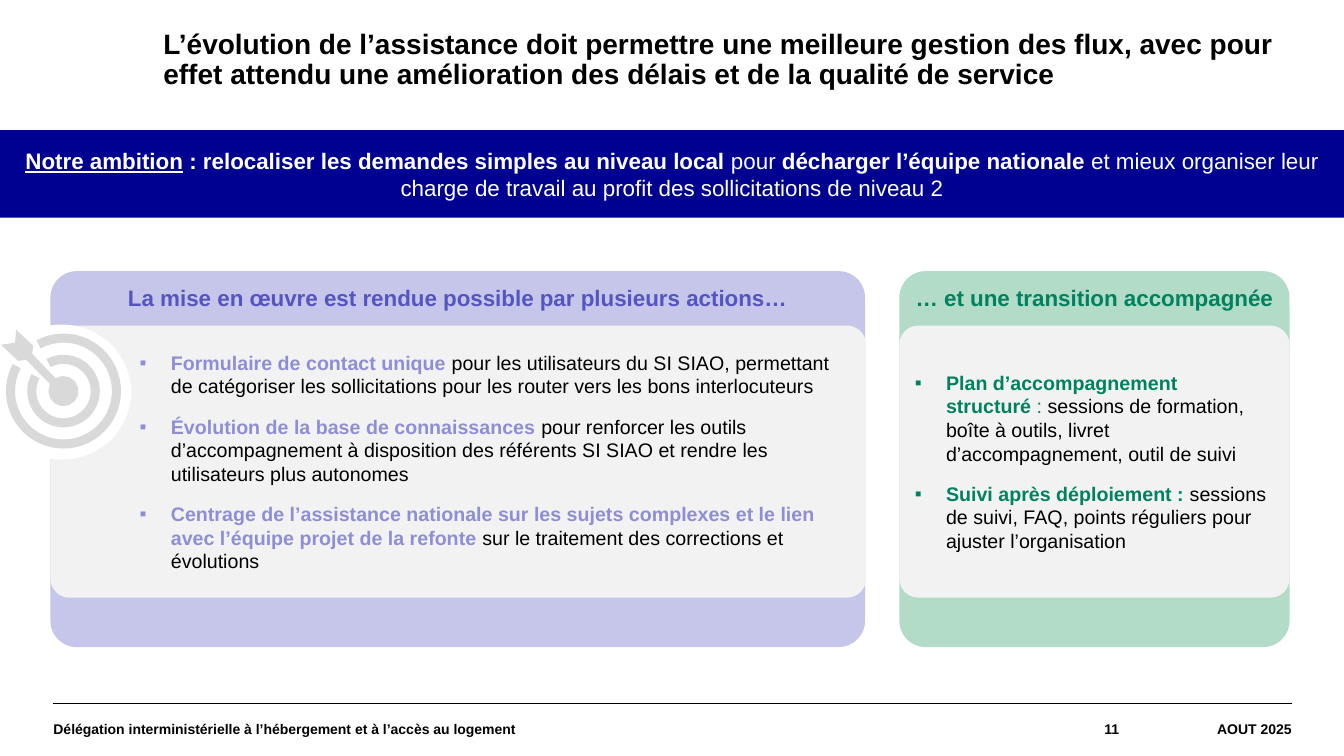
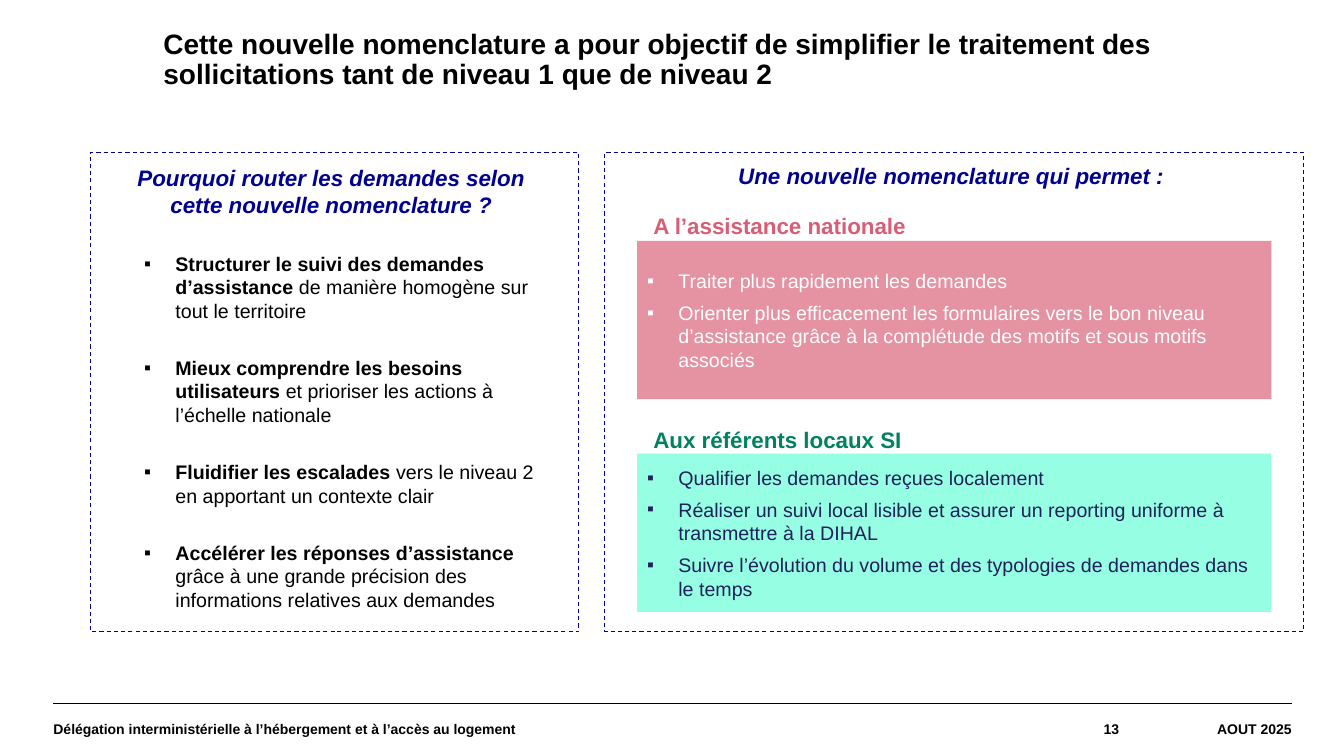
from math import cos, radians, sin
from typing import Any, NamedTuple

import pptx
from lxml import etree
from pptx import slide as sl
from pptx import util as u
from pptx.dml import color as col
from pptx.enum import dml, shapes, text
from pptx.oxml import ns

HUES = {
    "black": "000000", "white": "FFFFFF", "navy": "000091", "ink": "21215A",
    "violet": "5555C1", "lilac": "8E8ED5", "haze": "C6C6EA", "light": "F2F2F2",
    "green": "008260", "sage": "B3DCC8", "mint": "96FFE3",
    "rose": "D85D75", "pink": "E593A3", "grey": "D9D9D9",
}
FONT = "Arial"
CENTER, RIGHT = text.PP_ALIGN.CENTER, text.PP_ALIGN.RIGHT
TOP, MIDDLE = text.MSO_ANCHOR.TOP, text.MSO_ANCHOR.MIDDLE
RECT, ROUND = shapes.MSO_SHAPE.RECTANGLE, shapes.MSO_SHAPE.ROUNDED_RECTANGLE
OVAL, ARC = shapes.MSO_SHAPE.OVAL, shapes.MSO_SHAPE.BLOCK_ARC
FLUSH = (0, 0, 0, 0)
ORG = "Délégation interministérielle à l’hébergement et à l’accès au logement"


class Box(NamedTuple):
    left: float
    top: float
    width: float
    height: float


class Run(NamedTuple):
    words: str
    hue: str = "black"
    size: int = 14
    bold: bool = False
    italic: bool = False
    underline: bool = False


class Para(NamedTuple):
    runs: list[Run]
    form: dict[str, Any] = {}
    indent: float = 0


class Body(NamedTuple):
    paras: list[Para]
    anchor: Any = TOP
    inset: tuple[float, float, float, float] = (0.1, 0.05, 0.1, 0.05)


class Panel(NamedTuple):
    box: Box
    fill: str
    head: Para
    body: Body
    wide: float


class Card(NamedTuple):
    top: float
    label: Box
    title: str
    hue: str
    fill: str
    ink: str
    items: list[str]


def rgb(hue: str) -> col.RGBColor:
    return col.RGBColor.from_string(HUES[hue])


def apply(item: Any, form: dict[str, Any]) -> None:
    for name, value in form.items():
        setattr(item, name, value)


def strong(words: str, hue: str = "black", size: int = 14) -> Run:
    return Run(words, hue, size, bold=True)


def bullets(rows: list[list[Run]], gap: int) -> list[Para]:
    return [Para(row, {"space_before": u.Pt(gap if i else 0)}, 0.31)
            for i, row in enumerate(rows)]


def write(shape: Any, body: Body) -> None:
    frame = shape.text_frame
    sides = ("margin_left", "margin_top", "margin_right", "margin_bottom")
    apply(frame, {"word_wrap": True, "vertical_anchor": body.anchor,
                  **dict(zip(sides, map(u.Inches, body.inset)))})
    for i, para in enumerate(body.paras):
        line = frame.add_paragraph() if i else frame.paragraphs[0]
        if para.indent:
            props = line._p.get_or_add_pPr()
            props.set("marL", str(u.Inches(para.indent)))
            props.set("indent", str(-u.Inches(0.31)))
            etree.SubElement(props, ns.qn("a:buFont")).set("typeface", FONT)
            etree.SubElement(props, ns.qn("a:buChar")).set("char", "▪")
        apply(line, {"alignment": text.PP_ALIGN.LEFT, **para.form})
        for run in para.runs:
            part = line.add_run()
            part.text = run.words
            apply(part.font, {
                "name": FONT, "size": u.Pt(run.size), "bold": run.bold,
                "italic": run.italic, "underline": run.underline})
            part.font.color.rgb = rgb(run.hue)


def label(page: sl.Slide, box: Box, body: Body) -> None:
    write(page.shapes.add_textbox(*map(u.Inches, box)), body)


def paint(shape: Any, fill: str, edge: str = "") -> None:
    shape.shadow.inherit = False
    shape.fill.solid()
    shape.fill.fore_color.rgb = rgb(fill)
    if edge:
        shape.line.color.rgb = rgb(edge)
        apply(shape.line, {"width": u.Pt(0.75), "dash_style": dml.MSO_LINE.DASH})
    else:
        shape.line.fill.background()


def block(page: sl.Slide, box: Box, fill: str, body: Body | None = None,
          kind: Any = RECT, edge: str = "") -> Any:
    shape = page.shapes.add_shape(kind, *map(u.Inches, box))
    if kind == ROUND:
        shape.adjustments[0] = 0.07
    paint(shape, fill, edge)
    if body:
        write(shape, body)
    return shape


def frame(deck: Any, title: str, number: int) -> sl.Slide:
    page = deck.slides.add_slide(deck.slide_layouts[6])
    rule = page.shapes.add_connector(
        shapes.MSO_CONNECTOR.STRAIGHT,
        *map(u.Inches, (0.53, 6.98, 12.81, 6.98)))
    rule.line.color.rgb = rgb("black")
    rule.line.width = u.Pt(0.8)
    etree.SubElement(rule._element.spPr, ns.qn("a:effectLst"))
    foot = [(0.53, 8.61, ORG, None), (11.1, 1.71, "AOUT 2025", RIGHT),
            (9.13, 1.97, str(number), RIGHT)]
    for left, width, words, align in foot:
        para = Para([strong(words, size=10)], {"alignment": align})
        label(page, Box(left, 6.97, width, 0.53), Body([para], MIDDLE, FLUSH))
    head = Para([strong(title, size=20)], {"line_spacing": 0.9})
    label(page, Box(1.62, 0.3, 11.23, 1.05), Body([head], TOP, FLUSH))
    return page


def target(page: sl.Slide) -> None:
    block(page, Box(-0.08, 3.22, 1.38, 1.34), "white", kind=OVAL)
    mid_x, mid_y = 0.63, 3.88
    turns = [radians(208 - 27.5 * i) for i in range(13)]
    bull = [(mid_x + 0.15 * cos(t), mid_y + 0.15 * sin(t)) for t in turns]
    dart = [(0.32, 3.51), (0.33, 3.43), (0.16, 3.27), (0.15, 3.4),
            (0.01, 3.42), (0.18, 3.58), (0.26, 3.57), *bull]
    spots = [(u.Inches(x), u.Inches(y)) for x, y in dart]
    pen = page.shapes.build_freeform(*spots[0])
    pen.add_line_segments(spots[1:], close=True)
    paint(pen.convert_to_shape(), "grey")
    for radius in (0.57, 0.36):
        size = 2 * radius
        ring = block(page, Box(mid_x - radius, mid_y - radius, size, size),
                     "grey", kind=ARC)
        for i, value in enumerate((242 * 0.6, 208 * 0.6, 0.09 / size)):
            ring.adjustments[i] = value


def support(deck: Any) -> None:
    page = frame(
        deck, "L’évolution de l’assistance doit permettre une meilleure gestion "
        "des flux, avec pour effet attendu une amélioration des délais et de la "
        "qualité de service", 11)
    goal = [
        Run("Notre ambition", "white", 16, True, underline=True),
        strong(" : relocaliser les demandes simples au niveau local ", "white", 16),
        Run("pour ", "white", 16),
        strong("décharger l’équipe nationale ", "white", 16),
        Run("et mieux organiser leur charge de travail au profit des "
            "sollicitations de niveau 2", "white", 16),
    ]
    mid = {"alignment": CENTER}
    block(page, Box(0, 1.29, 13.33, 0.87), "navy", Body([Para(goal, mid)], MIDDLE))
    acts = [
        [strong("Formulaire de contact unique ", "lilac"),
         Run("pour les utilisateurs du SI SIAO, permettant de catégoriser les "
             "sollicitations pour les router vers les bons interlocuteurs")],
        [strong("Évolution de la base de connaissances ", "lilac"),
         Run("pour renforcer les outils d’accompagnement à disposition des "
             "référents SI SIAO et rendre les utilisateurs plus autonomes")],
        [strong("Centrage de l’assistance nationale sur les sujets complexes et "
                "le lien avec l’équipe projet de la refonte ", "lilac"),
         Run("sur le traitement des corrections et évolutions")],
    ]
    steps = [
        [strong("Plan d’accompagnement structuré ", "green"), Run(": ", "green"),
         Run("sessions de formation, boîte à outils, livret d’accompagnement, "
             "outil de suivi")],
        [strong("Suivi après déploiement : ", "green"),
         Run("sessions de suivi, FAQ, points réguliers pour ajuster "
             "l’organisation")],
    ]
    panels = [
        Panel(Box(0.5, 2.69, 8.08, 3.73), "haze",
              Para([strong("La mise en œuvre est rendue possible par plusieurs "
                           "actions…", "violet", 16)], mid),
              Body(bullets(acts, 12), MIDDLE, (0.83, 0, 0.1, 0)), 8.09),
        Panel(Box(8.92, 2.69, 3.87, 3.73), "sage",
              Para([strong("… et une transition accompagnée", "green", 16)], mid),
              Body(bullets(steps, 12), MIDDLE, (0.1, 0.05, 0.07, 0.05)), 3.87),
    ]
    for box, fill, head, body, wide in panels:
        block(page, box, fill, Body([head], TOP, (0, 0.05, 0, 0.05)), ROUND)
        block(page, Box(box.left, 3.23, wide, 2.7), "light", body, ROUND)
    target(page)


def naming(deck: Any) -> None:
    page = frame(
        deck, "Cette nouvelle nomenclature a pour objectif de simplifier le "
        "traitement des sollicitations tant de niveau 1 que de niveau 2", 13)
    block(page, Box(6, 1.51, 6.93, 4.76), "white", edge="navy")
    pairs = [
        ("Structurer le suivi des demandes d’assistance ",
         "de manière homogène sur tout le territoire"),
        ("Mieux comprendre les besoins utilisateurs ",
         "et prioriser les actions à l’échelle nationale"),
        ("Fluidifier les escalades ",
         "vers le niveau 2 en apportant un contexte clair"),
        ("Accélérer les réponses d’assistance ",
         "grâce à une grande précision des informations relatives aux demandes"),
    ]
    why = Para([Run("Pourquoi router les demandes selon cette nouvelle "
                    "nomenclature ?", "navy", 16, True, True)],
               {"alignment": CENTER, "space_after": u.Pt(6)})
    form = {"space_before": u.Pt(18), "space_after": u.Pt(6)}
    goals = [Para([strong(lead), Run(rest)], form, 0.6) for lead, rest in pairs]
    block(page, Box(0.9, 1.51, 4.84, 4.76), "white",
          Body([why, *goals], TOP, (0.24, 0.12, 0.31, 0.07)), edge="navy")
    head = Para([Run("Une nouvelle nomenclature qui permet : ", "navy", 16,
                     True, True)], {"alignment": CENTER})
    label(page, Box(6.76, 1.56, 5.41, 0.37), Body([head]))
    cards = [
        Card(2.39, Box(6.32, 2.06, 3.34, 0.37), "A l’assistance nationale",
             "rose", "pink", "white", [
                 "Traiter plus rapidement les demandes",
                 "Orienter plus efficacement les formulaires vers le bon niveau "
                 "d’assistance grâce à la complétude des motifs et sous motifs "
                 "associés"]),
        Card(4.5, Box(6.32, 4.18, 2.95, 0.37), "Aux référents locaux SI",
             "green", "mint", "ink", [
                 "Qualifier les demandes reçues localement",
                 "Réaliser un suivi local lisible et assurer un reporting "
                 "uniforme à transmettre à la DIHAL",
                 "Suivre l’évolution du volume et des typologies de demandes "
                 "dans le temps"]),
    ]
    for card in cards:
        rows = [[Run(item, card.ink)] for item in card.items]
        block(page, Box(6.32, card.top, 6.29, 1.57), card.fill,
              Body(bullets(rows, 6), MIDDLE))
        label(page, card.label,
              Body([Para([strong(card.title, card.hue, 16)])],
                   inset=(0.16, 0.05, 0.1, 0.05)))


def main() -> None:
    deck = pptx.Presentation()
    apply(deck, {"slide_width": u.Inches(13.33), "slide_height": u.Inches(7.5)})
    support(deck)
    naming(deck)
    deck.save("out.pptx")


if __name__ == "__main__":
    main()
